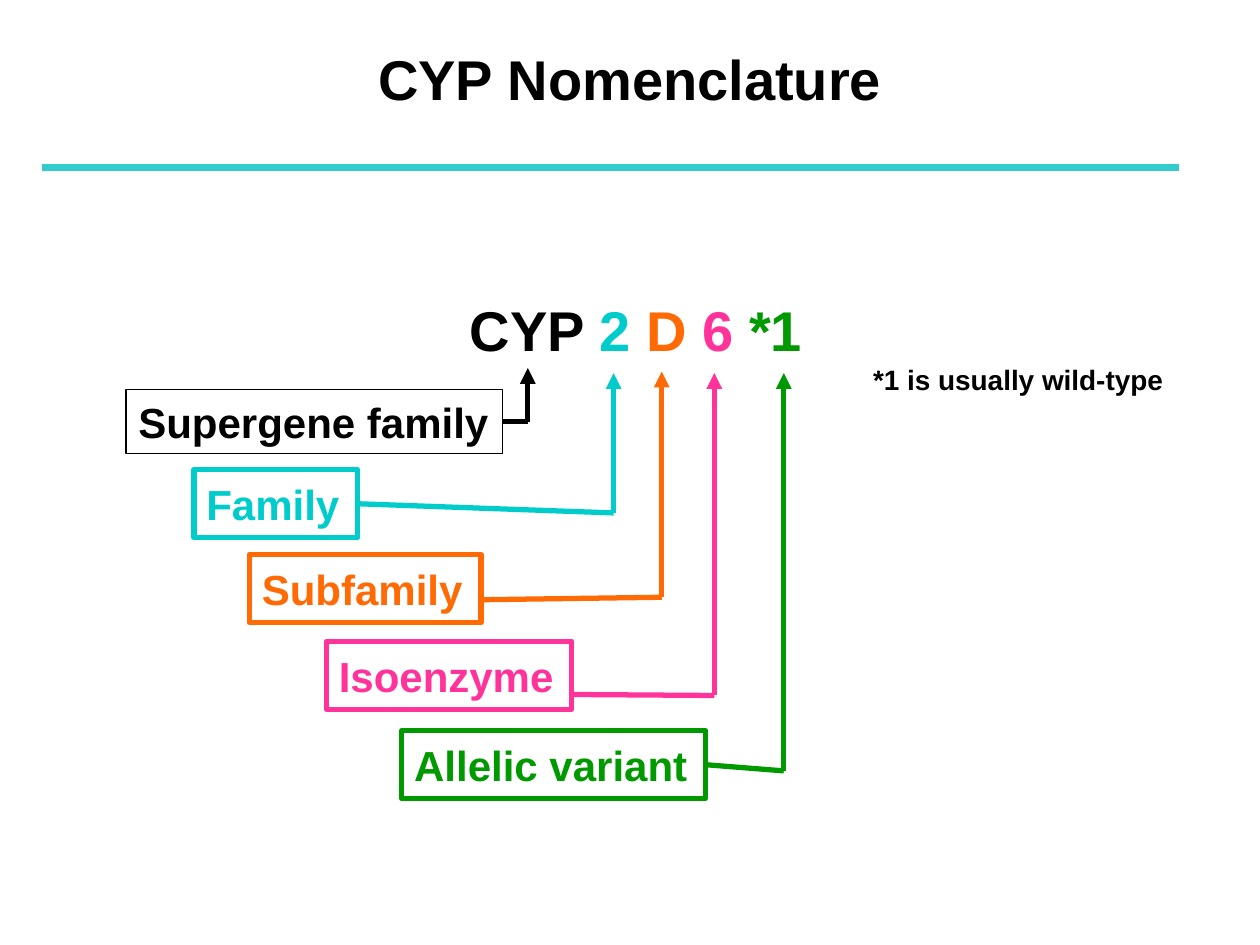
from dataclasses import dataclass

from lxml import etree
from pptx import Presentation
from pptx import util as u
from pptx.dml.color import RGBColor
from pptx.enum import shapes, text
from pptx.oxml.ns import qn


@dataclass(frozen=True)
class Theme:
    font: str = "Arial"
    black: str = "000000"
    cyan: str = "00CCCC"
    orange: str = "FF6A05"
    pink: str = "FF3399"
    green: str = "009900"
    rule: str = "33CCCC"
    title_size: int = 32
    label_size: int = 24
    note_size: int = 16


theme = Theme()


def format_run(run, size, color):
    run.font.name = theme.font
    run.font.size = u.Pt(size)
    run.font.bold = True
    run.font.color.rgb = RGBColor.from_string(color)


def add_line(parent, start, end, color, width, arrow=False):
    points = [u.Cm(value) for value in (*start, *end)]
    line = parent.add_connector(shapes.MSO_CONNECTOR.STRAIGHT, *points)
    line.line.color.rgb = RGBColor.from_string(color)
    line.line.width = u.Pt(width)
    if arrow:
        etree.SubElement(line.line._get_or_add_ln(), qn("a:tailEnd"), type="triangle")
    etree.SubElement(line._element.spPr, qn("a:effectLst"))
    return line


presentation = Presentation()
presentation.slide_width = u.Cm(25.4)
presentation.slide_height = u.Cm(19.05)
slide = presentation.slides.add_slide(presentation.slide_layouts[5])

# Title and the rule below it
title = slide.shapes.title
title.left, title.top, title.width, title.height = (
    u.Cm(value) for value in (1.27, 0.76, 22.86, 3.18))
title.text_frame.text = "CYP Nomenclature"
title.text_frame.vertical_anchor = text.MSO_ANCHOR.TOP
title.text_frame.paragraphs[0].alignment = text.PP_ALIGN.CENTER
format_run(title.text_frame.paragraphs[0].runs[0], theme.title_size, theme.black)
add_line(slide.shapes, (0.84, 3.38), (23.77, 3.38), theme.rule, 4)

# Gene name, one colour for each part, and the note beside it
gene_parts = [("CYP ", theme.black), ("2 ", theme.cyan), ("D ", theme.orange),
              ("6 ", theme.pink), ("*1", theme.green)]
note_parts = [("*1 is usually wild-type", theme.black)]
for box, size, parts in [
    ((9.22, 5.84, 7.21, 1.6), theme.title_size, gene_parts),
    ((17.35, 7.19, 6.4, 0.94), theme.note_size, note_parts),
]:
    textbox = slide.shapes.add_textbox(*(u.Cm(value) for value in box))
    textbox.text_frame.word_wrap = False
    for part, color in parts:
        run = textbox.text_frame.paragraphs[0].add_run()
        run.text = part
        format_run(run, size, color)

# Labels: box, border width, exit height (None: middle of the side),
# elbow point and height of the arrow tip
labels = [
    ("Supergene family", theme.black, (2.54, 7.85, 7.59, 1.3), 0.75, None, (10.64, 8.5), 7.42),
    ("Family", theme.cyan, (3.91, 9.47, 3.3, 1.37), 3, None, (12.37, 10.34), 7.52),
    ("Subfamily", theme.orange, (5.03, 11.18, 4.67, 1.37), 3, 12.09, (13.34, 12.04), 7.49),
    ("Isoenzyme", theme.pink, (6.58, 12.93, 4.95, 1.37), 3, 14, (14.4, 14.02), 7.52),
    ("Allelic variant", theme.green, (8.1, 14.73, 6.12, 1.37), 3, None, (15.8, 15.54), 7.52),
]
for name, color, box, border, exit_height, elbow, tip in labels:
    group = slide.shapes.add_group_shape()
    left, top, width, height = box
    label = group.shapes.add_shape(
        shapes.MSO_SHAPE.RECTANGLE, *(u.Cm(value) for value in box))
    label.shadow.inherit = False
    label.fill.background()
    label.line.color.rgb = RGBColor.from_string(color)
    label.line.width = u.Pt(border)
    label.text_frame.text = name
    label.text_frame.word_wrap = False
    label.text_frame.vertical_anchor = text.MSO_ANCHOR.MIDDLE
    paragraph = label.text_frame.paragraphs[0]
    paragraph.alignment = text.PP_ALIGN.LEFT
    format_run(paragraph.runs[0], theme.label_size, color)

    # Elbow from the label up to its part of the gene name
    start = (left + width, exit_height or top + height / 2)
    branch = add_line(group.shapes, start, elbow, color, 3)
    if exit_height is None:
        branch.begin_connect(label, 3)
    add_line(group.shapes, elbow, (elbow[0], tip), color, 3, arrow=True)

presentation.save("out.pptx")
